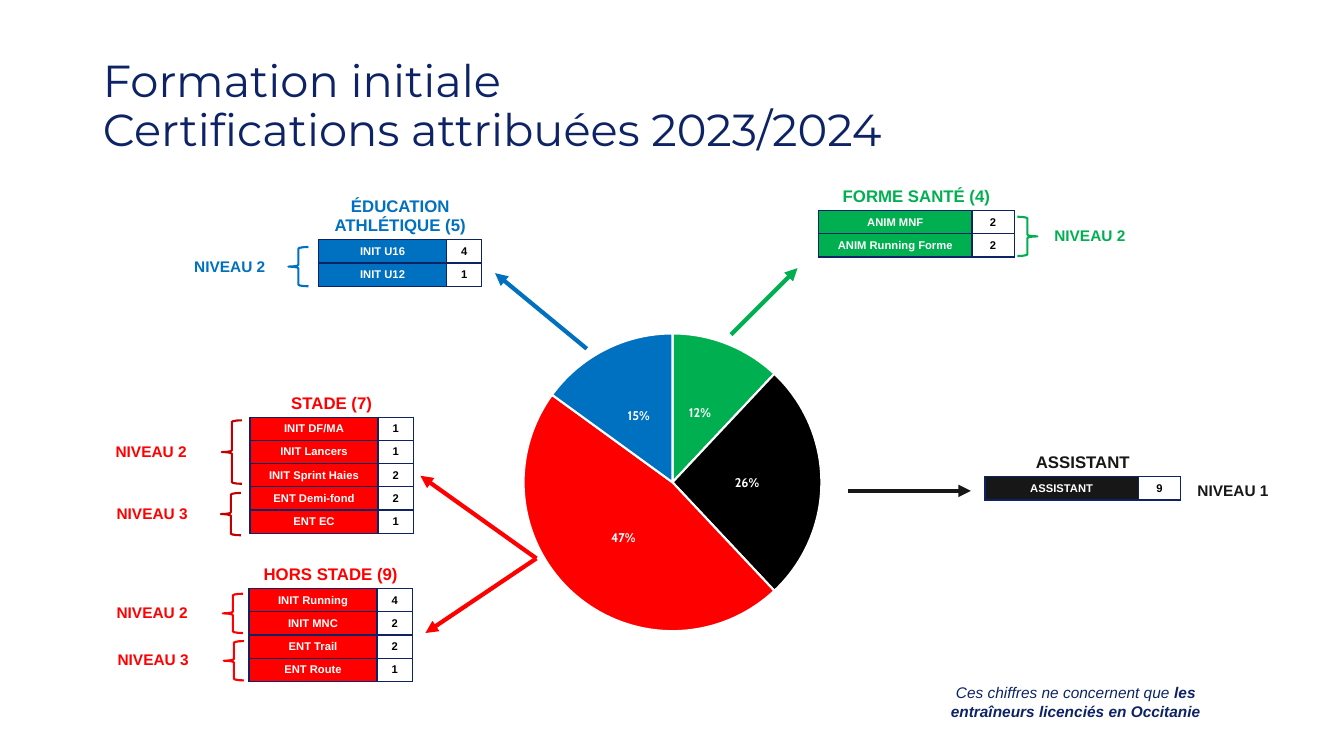
"""Build the slide on initial training certifications awarded in 2023/2024."""
from dataclasses import dataclass

from lxml.etree import SubElement
from pptx import Presentation
from pptx.chart.data import CategoryChartData
from pptx.dml.color import RGBColor
from pptx.enum.chart import XL_CHART_TYPE as ChartType, XL_LABEL_POSITION as LabelPosition
from pptx.enum.shapes import MSO_CONNECTOR as Connector, MSO_SHAPE as Shape
from pptx.enum.text import MSO_ANCHOR as Anchor, PP_ALIGN as Align
from pptx.oxml import parse_xml
from pptx.oxml.ns import nsdecls, qn
from pptx.util import Inches, Pt


@dataclass(frozen=True)
class Theme:
    """Colours, fonts and type sizes of the slide."""
    navy: str = "0D2366"
    red: str = "FF0000"
    dark_red: str = "C00000"
    blue: str = "0070C0"
    green: str = "00B050"
    ink: str = "181717"
    black: str = "000000"
    white: str = "FFFFFF"
    title_font: str = "Montserrat"
    text_font: str = "Arial"
    chart_font: str = "Cabin"
    title_size: int = 32
    header_size: int = 12
    level_size: int = 11
    chart_size: int = 10
    label_size: int = 9
    cell_size: int = 8


THEME = Theme()
ROW_HEIGHT = 0.23
NARROW, WIDE = (1.27, 0.35), (1.52, 0.42)

GROUPS = [
    ("STADE (7)", 2.48, 3.86, 0.28, NARROW, THEME.red,
     [("INIT DF/MA", 1), ("INIT Lancers", 1), ("INIT Sprint Haies", 2),
      ("ENT Demi-fond", 2), ("ENT EC", 1)]),
    ("HORS STADE (9)", 2.47, 5.56, 0.28, NARROW, THEME.red,
     [("INIT Running", 4), ("INIT MNC", 2), ("ENT Trail", 2), ("ENT Route", 1)]),
    ("ÉDUCATION ATHLÉTIQUE (5)", 3.16, 1.91, 0.47, NARROW, THEME.blue,
     [("INIT U16", 4), ("INIT U12", 1)]),
    ("FORME SANTÉ (4)", 8.12, 1.81, 0.28, WIDE, THEME.green,
     [("ANIM MNF", 2), ("ANIM Running Forme", 2)]),
    ("ASSISTANT", 9.77, 4.45, 0.28, WIDE, THEME.ink, [("ASSISTANT", 9)]),
]
LEVELS = [
    ("NIVEAU 2", 0.98, 4.34, THEME.red),
    ("NIVEAU 3", 0.99, 4.95, THEME.red),
    ("NIVEAU 2", 0.99, 5.93, THEME.red),
    ("NIVEAU 3", 1.0, 6.4, THEME.red),
    ("NIVEAU 1", 11.71, 4.72, THEME.ink),
    ("NIVEAU 2", 1.76, 2.5, THEME.blue),
    ("NIVEAU 2", 10.29, 2.19, THEME.green),
]
BRACES = [
    (Shape.LEFT_BRACE, 2.2, 4.17, 0.63, THEME.dark_red),
    (Shape.LEFT_BRACE, 2.19, 4.89, 0.42, THEME.dark_red),
    (Shape.LEFT_BRACE, 2.21, 5.89, 0.39, THEME.red),
    (Shape.LEFT_BRACE, 2.22, 6.36, 0.39, THEME.red),
    (Shape.LEFT_BRACE, 2.86, 2.45, 0.39, THEME.blue),
    (Shape.RIGHT_BRACE, 10.09, 2.15, 0.39, THEME.green),
]
ARROWS = [
    ((5.32, 5.54), (4.17, 4.72), THEME.red),
    ((5.32, 5.54), (4.22, 6.28), THEME.red),
    ((7.25, 3.32), (7.91, 2.66), THEME.green),
    ((5.82, 3.46), (4.91, 2.71), THEME.blue),
    ((8.41, 4.87), (9.63, 4.87), THEME.ink),
]
SHARES = [(12, THEME.green), (26, THEME.black), (47, THEME.red), (15, THEME.blue)]


def set_font(font, name, size, color, bold=False):
    """Apply family, size, colour and weight to a font."""
    font.name, font.size, font.bold = name, Pt(size), bold
    font.color.rgb = RGBColor.from_string(color)


def paint(fill, color):
    """Give a fill one solid colour."""
    fill.solid()
    fill.fore_color.rgb = RGBColor.from_string(color)


def add_title(slide, text):
    """Place and format the title placeholder."""
    title = slide.shapes.title
    title.left, title.top, title.width, title.height = map(Inches, (0.92, 0.4, 10.8, 1.33))
    frame = title.text_frame
    frame.vertical_anchor = Anchor.MIDDLE
    paragraph = frame.paragraphs[0]
    paragraph.text = text
    paragraph.alignment, paragraph.line_spacing = Align.LEFT, 0.9
    set_font(paragraph.font, THEME.title_font, THEME.title_size, THEME.navy)


def set_borders(cell, visible):
    """Draw the listed cell edges and clear the others."""
    properties = cell._tc.get_or_add_tcPr()
    for edge in "LRTB":
        paint_xml = (f'<a:solidFill><a:srgbClr val="{THEME.navy}"/></a:solidFill>'
                     if edge in visible else "<a:noFill/>")
        properties.append(parse_xml(
            f'<a:ln{edge} {nsdecls("a")} w="{Pt(1)}">{paint_xml}</a:ln{edge}>'))


def fill_cell(cell, text, size, color, background=None, edges="LRTB"):
    """Write one centred bold cell with its borders and fill."""
    set_borders(cell, edges)
    if background:
        paint(cell.fill, background)
    else:
        cell.fill.background()
    cell.vertical_anchor = Anchor.MIDDLE
    cell.margin_top = cell.margin_bottom = Inches(0.04)
    paragraph = cell.text_frame.paragraphs[0]
    paragraph.text = text
    paragraph.alignment = Align.CENTER
    set_font(paragraph.font, THEME.text_font, size, color, bold=True)


def add_group(slide, name, left, top, header_height, widths, color, rows):
    """Add the table of one certification group."""
    height = header_height + ROW_HEIGHT * len(rows)
    table = slide.shapes.add_table(
        len(rows) + 1, 2, *map(Inches, (left, top, sum(widths), height))).table
    table.horz_banding = table.first_row = False
    for column, width in zip(table.columns, widths):
        column.width = Inches(width)
    for row in table.rows:
        row.height = Inches(ROW_HEIGHT)
    table.rows[0].height = Inches(header_height)
    header, spanned = table.cell(0, 0), table.cell(0, 1)
    header.merge(spanned)
    fill_cell(header, name, THEME.header_size, color, edges="B")
    set_borders(spanned, "B")
    spanned.fill.background()
    for index, (label, count) in enumerate(rows, 1):
        fill_cell(table.cell(index, 0), label, THEME.cell_size, THEME.white, color)
        fill_cell(table.cell(index, 1), str(count), THEME.cell_size, THEME.black)


def add_arrow(slide, start, end, color):
    """Add a thick line with an arrowhead at its end."""
    arrow = slide.shapes.add_connector(Connector.STRAIGHT, *map(Inches, start + end))
    arrow.line.width = Pt(3)
    arrow.line.color.rgb = RGBColor.from_string(color)
    SubElement(arrow.line._get_or_add_ln(), qn("a:tailEnd"), type="triangle")
    SubElement(arrow._element.spPr, qn("a:effectLst"))


def add_brace(slide, kind, left, top, height, color):
    """Add an outlined brace."""
    brace = slide.shapes.add_shape(kind, *map(Inches, (left, top, 0.2, height)))
    brace.shadow.inherit = False
    brace.fill.background()
    brace.line.width = Pt(1.5)
    brace.line.color.rgb = RGBColor.from_string(color)


def add_centred_text(slide, left, top, width, height):
    """Add a wrapping text box and return its centred paragraph."""
    box = slide.shapes.add_textbox(*map(Inches, (left, top, width, height)))
    box.text_frame.word_wrap = True
    paragraph = box.text_frame.paragraphs[0]
    paragraph.alignment = Align.CENTER
    return paragraph


def add_level(slide, text, left, top, color):
    """Add a level label."""
    paragraph = add_centred_text(slide, left, top, 1.04, 0.29)
    paragraph.text = text
    set_font(paragraph.font, THEME.text_font, THEME.level_size, color, bold=True)


def add_note(slide, opening, emphasis):
    """Add the italic note with its bold ending."""
    paragraph = add_centred_text(slide, 9.26, 6.73, 2.82, 0.47)
    for text, bold in ((opening, False), (emphasis, True)):
        run = paragraph.add_run()
        run.text = text
        set_font(run.font, THEME.text_font, THEME.level_size, THEME.navy, bold)
        run.font.italic = True


def add_pie(slide):
    """Add the pie chart of certification shares."""
    data = CategoryChartData()
    data.categories = [str(number) for number in range(1, len(SHARES) + 1)]
    data.add_series("Series 1", [share for share, _ in SHARES])
    chart = slide.shapes.add_chart(
        ChartType.PIE, *map(Inches, (4.38, 3.17, 4.58, 3.23)), data).chart
    chart.has_legend = chart.has_title = False
    set_font(chart.font, THEME.chart_font, THEME.chart_size, THEME.black)
    plot = chart.plots[0]
    plot.vary_by_categories = True
    for index, (_, color) in enumerate(SHARES):
        point_format = plot.series[0].points[index].format
        paint(point_format.fill, color)
        point_format.line.width = Pt(1.5)
        point_format.line.color.rgb = RGBColor.from_string(THEME.white)
    labels = plot.series[0].data_labels
    labels.show_percentage, labels.show_value = True, False
    labels.number_format, labels.number_format_is_linked = "0%", False
    labels.position = LabelPosition.CENTER
    set_font(labels.font, THEME.chart_font, THEME.label_size, THEME.white, bold=True)


def main():
    """Build and save the slide."""
    presentation = Presentation()
    presentation.slide_width, presentation.slide_height = Inches(13.33), Inches(7.5)
    slide = presentation.slides.add_slide(presentation.slide_layouts[5])
    add_title(slide, "Formation initiale\vCertifications attribuées 2023/2024")
    for add_element, items in ((add_group, GROUPS), (add_arrow, ARROWS),
                               (add_brace, BRACES), (add_level, LEVELS)):
        for item in items:
            add_element(slide, *item)
    add_pie(slide)
    add_note(slide, "Ces chiffres ne concernent que ", "les entraîneurs licenciés en Occitanie")
    presentation.save("out.pptx")


if __name__ == "__main__":
    main()
